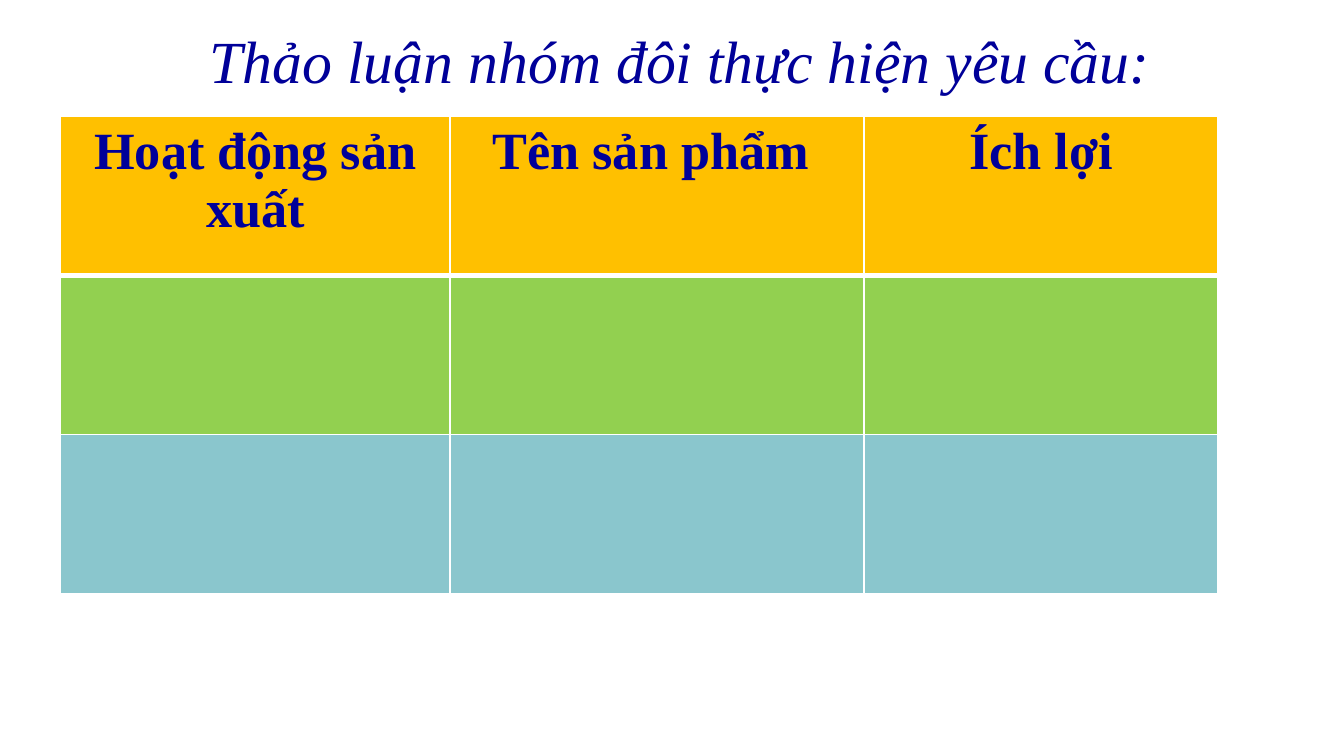
from lxml import etree
from pptx import Presentation
from pptx.dml.color import RGBColor
from pptx.enum.text import MSO_ANCHOR, MSO_AUTO_SIZE, PP_ALIGN
from pptx.oxml.ns import qn
from pptx.util import Inches, Pt

LEFT, CENTER = PP_ALIGN.LEFT, PP_ALIGN.CENTER
TOP = MSO_ANCHOR.TOP
FIT_SHAPE = MSO_AUTO_SIZE.SHAPE_TO_FIT_TEXT
TITLE_ONLY = 5

WIDTH = 10
HEIGHT = WIDTH * 9 / 16
FONT = "Times New Roman"
COLORS = {
    "text": "000099",
    "border": "FFFFFF",
    "header": "FFC000",
    "first": "92D050",
    "second": "8AC6CD",
}
HEADINGS = ["Hoạt động sản xuất", "Tên sản phẩm ", "Ích lợi"]
ROW_COLORS = ["header", "first", "second"]
COLUMN_WIDTHS = [2.9, 3.08, 2.63]
TABLE_HEIGHT = 3.55
THIN, THICK = 1, 3


class SlideBuilder:
    """Holds the style and the current slide."""

    def __init__(self, presentation):
        layout = presentation.slide_layouts[TITLE_ONLY]
        self.slide = presentation.slides.add_slide(layout)

    def add_run(self, paragraph, text, size, bold=False, italic=False):
        run = paragraph.add_run()
        run.text = text
        run.font.name = FONT
        run.font.size = Pt(size)
        run.font.bold = bold
        run.font.italic = italic
        run.font.color.rgb = RGBColor.from_string(COLORS["text"])

    def title(self, text, left, top, width, height):
        shape = self.slide.shapes.title
        shape.left, shape.top = Inches(left), Inches(top)
        shape.width, shape.height = Inches(width), Inches(height)
        frame = shape.text_frame
        frame.word_wrap = False
        frame.auto_size = FIT_SHAPE
        frame.vertical_anchor = TOP
        paragraph = frame.paragraphs[0]
        paragraph.alignment = LEFT
        self.add_run(paragraph, text, 32, italic=True)

    def border(self, cell, side, width):
        """Draw one side (L, R, T or B) of a cell; call before filling it."""
        properties = cell._tc.get_or_add_tcPr()
        line = etree.SubElement(properties, qn(f"a:ln{side}"), w=str(Pt(width)))
        fill = etree.SubElement(line, qn("a:solidFill"))
        etree.SubElement(fill, qn("a:srgbClr"), val=COLORS["border"])

    def table(self, left, top):
        frame = self.slide.shapes.add_table(
            len(ROW_COLORS), len(COLUMN_WIDTHS), Inches(left), Inches(top),
            Inches(sum(COLUMN_WIDTHS)), Inches(TABLE_HEIGHT))
        table = frame.table
        for column, width in zip(table.columns, COLUMN_WIDTHS):
            column.width = Inches(width)
        for index, (row, color) in enumerate(zip(table.rows, ROW_COLORS)):
            widths = {
                "L": THIN,
                "R": THIN,
                "T": THICK if index == 1 else THIN,
                "B": THICK if index == 0 else THIN,
            }
            for cell in row.cells:
                for side, width in widths.items():
                    self.border(cell, side, width)
                cell.fill.solid()
                cell.fill.fore_color.rgb = RGBColor.from_string(COLORS[color])
        for cell, heading in zip(table.rows[0].cells, HEADINGS):
            paragraph = cell.text_frame.paragraphs[0]
            paragraph.alignment = CENTER
            self.add_run(paragraph, heading, 28, bold=True)


def main():
    presentation = Presentation()
    presentation.slide_width = Inches(WIDTH)
    presentation.slide_height = Inches(HEIGHT)
    builder = SlideBuilder(presentation)
    builder.table(0.045 * WIDTH, 0.154 * HEIGHT)
    builder.title("Thảo luận nhóm đôi thực hiện yêu cầu:",
                  0.146 * WIDTH, 0.022 * HEIGHT, 0.738 * WIDTH, 0.114 * HEIGHT)
    presentation.save("out.pptx")


if __name__ == "__main__":
    main()
